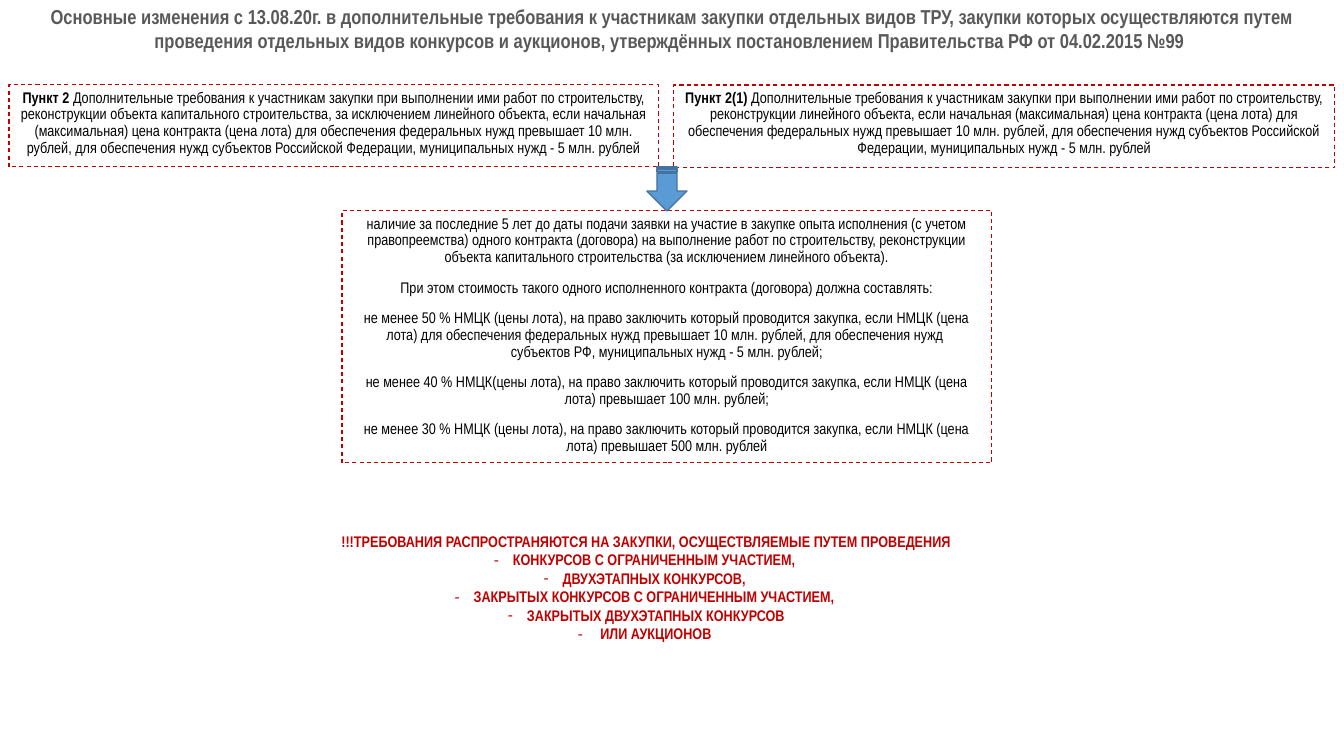
"""Build a slide on the additional requirements for procurement participants."""
from dataclasses import dataclass

from lxml.etree import SubElement
from pptx import Presentation
from pptx.dml.color import RGBColor
from pptx.enum.dml import MSO_LINE
from pptx.enum.shapes import MSO_SHAPE
from pptx.enum.text import MSO_ANCHOR, MSO_AUTO_SIZE, PP_ALIGN
from pptx.oxml.ns import qn
from pptx.util import Emu, Pt

TITLE = (
    "Основные изменения с 13.08.20г. в дополнительные требования к участникам закупки "
    "отдельных видов ТРУ, закупки которых осуществляются путем проведения отдельных видов "
    "конкурсов и аукционов, утверждённых постановлением Правительства РФ от 04.02.2015 №99 "
)
WORKS = "Дополнительные требования к участникам закупки при выполнении ими работ по строительству, реконструкции "
LIMITS = (
    "если начальная (максимальная) цена контракта (цена лота) для обеспечения федеральных "
    "нужд превышает 10 млн. рублей, для обеспечения нужд субъектов Российской Федерации, "
    "муниципальных нужд - 5 млн. рублей"
)
LOT = "НМЦК (цены лота), на право заключить который проводится закупка, если НМЦК (цена лота) "
BOXES = [
    ((674, 85, 661, 83), [("Пункт 2(1) ", WORKS + "линейного объекта, " + LIMITS)]),
    ((9, 85, 650, 82), [
        ("Пункт 2 ", WORKS + "объекта капитального строительства, за исключением линейного объекта, " + LIMITS),
    ]),
    ((342, 211, 650, 252), [
        ("", "наличие за последние 5 лет до даты подачи заявки на участие в закупке опыта исполнения "
             "(с учетом правопреемства) одного контракта (договора) на выполнение работ по строительству, "
             "реконструкции объекта капитального строительства (за исключением линейного объекта)."),
        ("", "При этом стоимость такого одного исполненного контракта (договора) должна составлять:"),
        ("", "не менее 50 % " + LOT + "для обеспечения федеральных нужд превышает 10 млн. рублей, "
             "для обеспечения нужд \nсубъектов РФ, муниципальных нужд - 5 млн. рублей;"),
        ("", "не менее 40 % " + LOT.replace("НМЦК (цены", "НМЦК(цены") + "превышает 100 млн. рублей;"),
        ("", "не менее 30 % " + LOT + "превышает 500 млн. рублей"),
    ]),
]
SCOPE_HEADING = "!!!ТРЕБОВАНИЯ РАСПРОСТРАНЯЮТСЯ НА ЗАКУПКИ, ОСУЩЕСТВЛЯЕМЫЕ ПУТЕМ ПРОВЕДЕНИЯ"
SCOPE = [
    "КОНКУРСОВ С ОГРАНИЧЕННЫМ УЧАСТИЕМ, ",
    "ДВУХЭТАПНЫХ КОНКУРСОВ, ",
    "ЗАКРЫТЫХ КОНКУРСОВ С ОГРАНИЧЕННЫМ УЧАСТИЕМ, ",
    "ЗАКРЫТЫХ ДВУХЭТАПНЫХ КОНКУРСОВ",
    " ИЛИ АУКЦИОНОВ ",
]
TITLE_AREA = (0, 0, 1344, 58)
ARROW_AREA = (645, 169, 44, 40)
SCOPE_AREA = (327, 527, 639, 122)
BULLET_INDENT = 19


@dataclass(frozen=True)
class Theme:
    """Fonts, sizes and colours of the slide."""
    font: str = "Arial Narrow"
    title_size: float = 14.4
    body_size: float = 11
    title: str = "595959"
    text: str = "000000"
    accent: str = "C00000"
    arrow: str = "5B9BD5"
    arrow_line: str = "43739E"


THEME = Theme()


def px(length):
    """Turn pixels into EMU."""
    return Emu(round(length * 914400 / 100.8))


def place(shape, area):
    """Move a shape to an area given in pixels."""
    shape.left, shape.top, shape.width, shape.height = map(px, area)


def add_run(paragraph, text, color, size=THEME.body_size, bold=False):
    """Add one formatted run."""
    run = paragraph.add_run()
    run.text = text
    run.font.name = THEME.font
    run.font.size = Pt(size)
    run.font.bold = bold
    run.font.color.rgb = RGBColor.from_string(color)


def centred_paragraph(frame, index):
    """Return the paragraph at index, centred and without extra space."""
    paragraph = frame.add_paragraph() if index else frame.paragraphs[0]
    paragraph.alignment = PP_ALIGN.CENTER
    paragraph.space_before = Pt(0)
    return paragraph


def add_box(slide, area, paragraphs):
    """Add a dashed box of centred paragraphs."""
    box = slide.shapes.add_shape(MSO_SHAPE.RECTANGLE, *map(px, area))
    box.shadow.inherit = False
    box.fill.background()
    box.line.color.rgb = RGBColor.from_string(THEME.accent)
    box.line.width = Pt(0.75)
    box.line.dash_style = MSO_LINE.DASH
    frame = box.text_frame
    frame.word_wrap = True
    frame.vertical_anchor = MSO_ANCHOR.TOP
    for index, (lead, text) in enumerate(paragraphs):
        paragraph = centred_paragraph(frame, index)
        paragraph.line_spacing = 0.9
        if index:
            paragraph.space_before = Pt(10)
        if lead:
            add_run(paragraph, lead, THEME.text, bold=True)
        for line_index, line in enumerate(text.split("\n")):
            if line_index:
                paragraph.add_line_break()
            add_run(paragraph, line, THEME.text)


def add_arrow(slide):
    """Add the striped arrow that points down."""
    arrow = slide.shapes.add_shape(MSO_SHAPE.STRIPED_RIGHT_ARROW, *map(px, ARROW_AREA))
    arrow.rotation = 90
    arrow.shadow.inherit = False
    arrow.fill.solid()
    arrow.fill.fore_color.rgb = RGBColor.from_string(THEME.arrow)
    arrow.line.color.rgb = RGBColor.from_string(THEME.arrow_line)
    arrow.line.width = Pt(1)


def set_bullet(paragraph, bullet):
    """Set the hanging indent and the bullet, if any."""
    properties = paragraph._p.get_or_add_pPr()
    indent = px(BULLET_INDENT) if bullet else 0
    properties.set("marL", str(indent))
    properties.set("indent", str(-indent))
    if bullet:
        SubElement(properties, qn("a:buFontTx"))
        SubElement(properties, qn("a:buChar")).set("char", bullet)
    else:
        SubElement(properties, qn("a:buNone"))


def fill_title(title):
    """Fill the title placeholder."""
    place(title, TITLE_AREA)
    frame = title.text_frame
    frame.word_wrap = True
    frame.auto_size = MSO_AUTO_SIZE.NONE
    frame.vertical_anchor = MSO_ANCHOR.BOTTOM
    add_run(centred_paragraph(frame, 0), TITLE, THEME.title, THEME.title_size, True)


def fill_scope(body):
    """Fill the body placeholder with the kinds of procurement."""
    place(body, SCOPE_AREA)
    frame = body.text_frame
    frame.word_wrap = False
    frame.auto_size = MSO_AUTO_SIZE.SHAPE_TO_FIT_TEXT
    frame.vertical_anchor = MSO_ANCHOR.TOP
    for index, text in enumerate([SCOPE_HEADING, *SCOPE]):
        paragraph = centred_paragraph(frame, index)
        set_bullet(paragraph, "-" if index else None)
        add_run(paragraph, text, THEME.accent, bold=True)


def main():
    """Build and save the presentation."""
    presentation = Presentation()
    presentation.slide_width, presentation.slide_height = px(1344), px(756)
    slide = presentation.slides.add_slide(presentation.slide_layouts[1])
    fill_title(slide.shapes.title)
    for area, paragraphs in BOXES:
        add_box(slide, area, paragraphs)
    add_arrow(slide)
    fill_scope(slide.placeholders[1])
    presentation.save("out.pptx")


if __name__ == "__main__":
    main()
